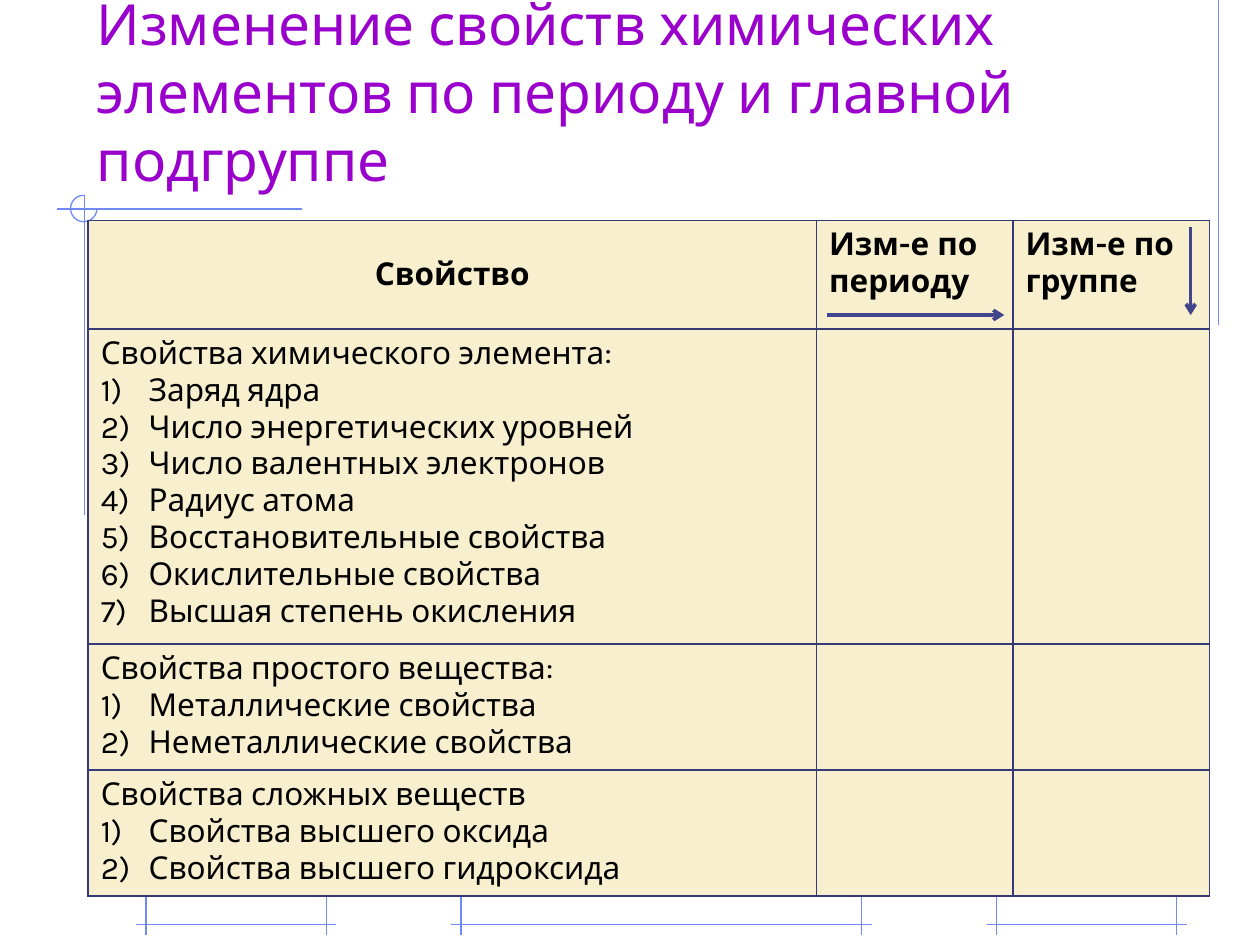
import pptx
import pptx.dml.color
import pptx.enum.shapes
import pptx.enum.text
import pptx.oxml
import pptx.oxml.ns
import pptx.util
from dataclasses import dataclass
from lxml import etree
from pptx.util import Inches


@dataclass(frozen=True)
class Theme:
    """Colours, font and sizes of the slide."""
    font: str = "Karla"
    title: str = "9900CC"
    text: str = "000000"
    cell: str = "F7EFCD"
    border: str = "353A77"
    guide: str = "6F89F7"
    arrow: str = "40458C"
    title_size: float = 32.4
    text_size: float = 18
    guide_width: float = 0.75
    border_width: float = 1
    arrow_width: float = 2


THEME = Theme()
TITLE = "Изменение свойств химических элементов по периоду и главной подгруппе"
HEADERS = ["Свойство", "Изм-е по периоду", "Изм-е по группе"]
GROUPS = [
    ("Свойства химического элемента:", [
        "Заряд ядра", "Число энергетических уровней", "Число валентных электронов",
        "Радиус атома", "Восстановительные свойства", "Окислительные свойства",
        "Высшая степень окисления"]),
    ("Свойства простого вещества:", ["Металлические свойства", "Неметаллические свойства"]),
    ("Свойства сложных веществ", ["Свойства высшего оксида", "Свойства высшего гидроксида"]),
]
COLUMN_WIDTHS = [5.78, 1.56, 1.56]
ROW_HEIGHTS = [0.86, 2.45, 0.98, 0.98]


def rgb(value):
    """Return a colour object for a hex value."""
    return pptx.dml.color.RGBColor.from_string(value)


def add_child(parent, tag, **attributes):
    """Append a DrawingML element and return it."""
    return etree.SubElement(parent, pptx.oxml.ns.qn(tag), attributes)


def set_font(para, size, color, bold=False):
    """Set the font of a whole paragraph."""
    para.font.name = THEME.font
    para.font.size = pptx.util.Pt(size)
    para.font.bold = bold
    para.font.color.rgb = rgb(color)


def add_line(page, start, end, color, width, arrow=False):
    """Draw a straight line, with an arrowhead at its end if asked."""
    points = [Inches(value) for value in (*start, *end)]
    line = page.shapes.add_connector(pptx.enum.shapes.MSO_CONNECTOR.STRAIGHT, *points)
    line.line.color.rgb = rgb(color)
    line.line.width = pptx.util.Pt(width)
    if arrow:
        add_child(line.line._get_or_add_ln(), "a:tailEnd", type="arrow")
    add_child(line._element.spPr, "a:effectLst")


def add_guide(page, start, end):
    """Draw one thin decorative line."""
    add_line(page, start, end, THEME.guide, THEME.guide_width)


def add_frame(page, left, top, width, height):
    """Draw four lines that cross near the corners of a box."""
    right, bottom, inset = left + width, top + height, 0.08
    for y in (top + inset, bottom - inset):
        add_guide(page, (left, y), (right, y))
    for x in (left + inset, right - inset):
        add_guide(page, (x, top), (x, bottom))


def add_corner(page, left, top, width, height):
    """Draw the crossing lines and the open circle left of the table."""
    add_guide(page, (left + width, top + 0.11), (left, top + 0.11))
    add_guide(page, (left + 0.22, top), (left + 0.22, top + height))
    circle = page.shapes.add_shape(
        pptx.enum.shapes.MSO_SHAPE.ARC,
        Inches(left + 0.11), Inches(top), Inches(0.21), Inches(0.21))
    circle.adjustments[0] = 0
    circle.adjustments[1] = 162
    circle.shadow.inherit = False
    circle.fill.background()
    circle.line.color.rgb = rgb(THEME.guide)
    circle.line.width = pptx.util.Pt(THEME.guide_width)


def add_title(page, left, top, width, height):
    """Place the title at the bottom of its box."""
    box = page.shapes.add_textbox(Inches(left), Inches(top), Inches(width), Inches(height))
    frame = box.text_frame
    frame.word_wrap = True
    frame.vertical_anchor = pptx.enum.text.MSO_ANCHOR.BOTTOM
    frame.text = TITLE
    set_font(frame.paragraphs[0], THEME.title_size, THEME.title)


def style_cell(cell):
    """Give a cell its borders and fill."""
    properties = cell._tc.get_or_add_tcPr()
    for side in ("a:lnL", "a:lnR", "a:lnT", "a:lnB"):
        border = add_child(properties, side, w=str(pptx.util.Pt(THEME.border_width)))
        add_child(add_child(border, "a:solidFill"), "a:srgbClr", val=THEME.border)
    cell.fill.solid()
    cell.fill.fore_color.rgb = rgb(THEME.cell)


def fill_group(cell, heading, items):
    """Write a heading and its numbered list in a cell."""
    frame = cell.text_frame
    frame.text = heading
    for item in items:
        para = frame.add_paragraph()
        para.text = item
        properties = para._p.get_or_add_pPr()
        properties.set("marL", str(Inches(0.38)))
        properties.set("indent", str(-Inches(0.38)))
        add_child(properties, "a:buFont", typeface=THEME.font)
        add_child(properties, "a:buAutoNum", type="arabicParenR")
    for para in frame.paragraphs:
        set_font(para, THEME.text_size, THEME.text)


def add_property_table(page, left, top, width, height):
    """Place the table of properties and the arrows in its header."""
    table = page.shapes.add_table(
        len(ROW_HEIGHTS), len(COLUMN_WIDTHS),
        Inches(left), Inches(top), Inches(width), Inches(height)).table
    for column, size in zip(table.columns, COLUMN_WIDTHS):
        column.width = Inches(size)
    for row, size in zip(table.rows, ROW_HEIGHTS):
        row.height = Inches(size)
    for cell in table.iter_cells():
        style_cell(cell)
    for index, header in enumerate(HEADERS):
        cell = table.cell(0, index)
        cell.text = header
        set_font(cell.text_frame.paragraphs[0], THEME.text_size, THEME.text, bold=True)
    first = table.cell(0, 0)
    first.vertical_anchor = pptx.enum.text.MSO_ANCHOR.MIDDLE
    first.text_frame.paragraphs[0].alignment = pptx.enum.text.PP_ALIGN.CENTER
    for index, (heading, items) in enumerate(GROUPS, start=1):
        fill_group(table.cell(index, 0), heading, items)
    period, right, low = left + COLUMN_WIDTHS[0], left + width, top + 0.75
    for start, end in (((period + 0.08, low), (period + 1.49, low)),
                       ((right - 0.15, top + 0.05), (right - 0.15, low))):
        add_line(page, start, end, THEME.arrow, THEME.arrow_width, arrow=True)


def main():
    """Build the slide and save it."""
    deck = pptx.Presentation()
    deck.slide_width, deck.slide_height = Inches(10), Inches(7.5)
    page = deck.slides.add_slide(deck.slide_layouts[6])
    for left, width in ((3.58, 3.34), (7.83, 1.59), (1.08, 1.59)):
        add_frame(page, left, 6.92, width, 0.5)
    add_guide(page, (9.67, 0), (9.67, 2.58))
    add_corner(page, 0.45, 1.55, 1.95, 2.54)
    add_title(page, 0.67, 0.33, 9.1, 1.25)
    add_property_table(page, 0.7, 1.75, sum(COLUMN_WIDTHS), sum(ROW_HEIGHTS))
    deck.save("out.pptx")


if __name__ == "__main__":
    main()
